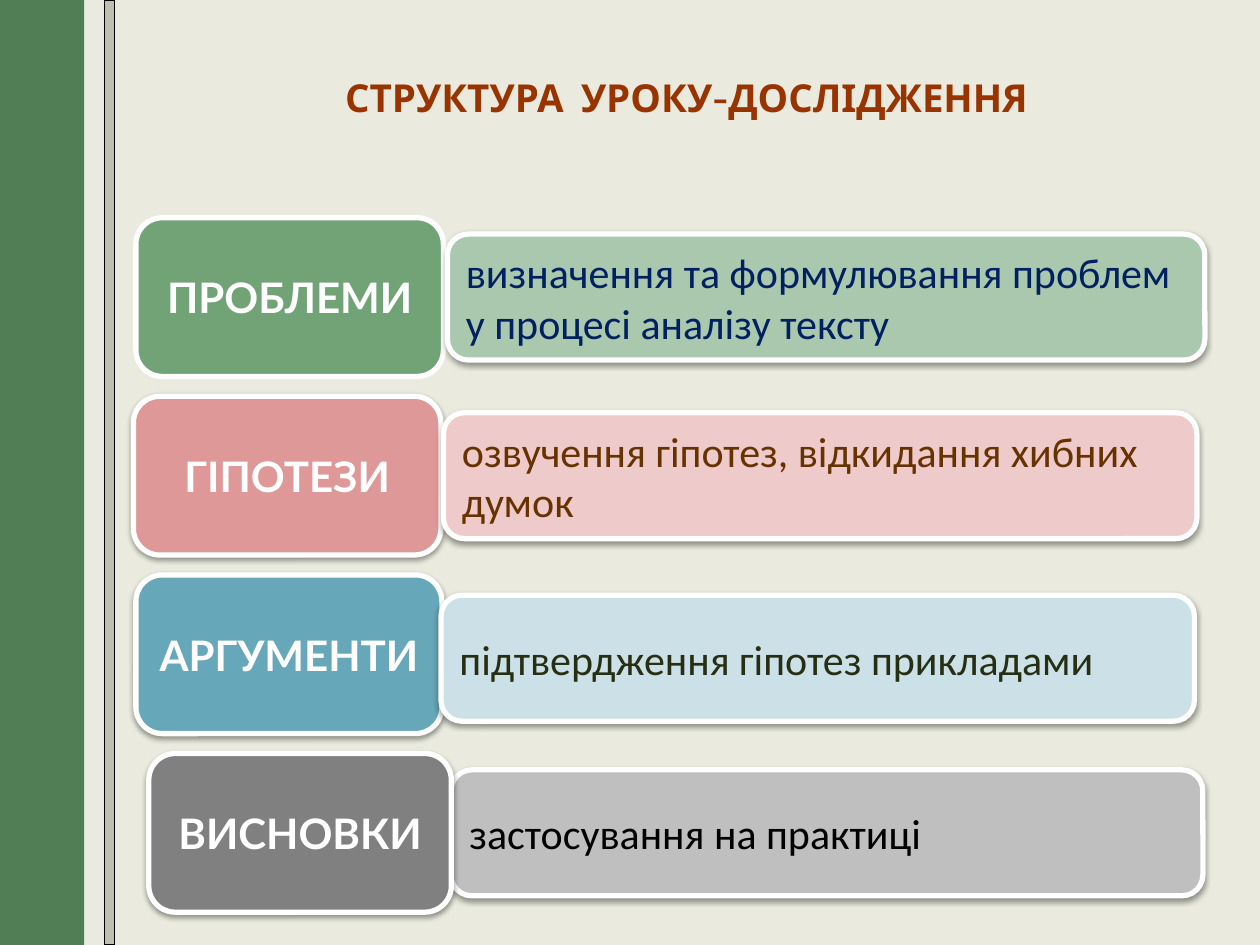
from lxml import etree
from pptx import Presentation
from pptx.dml.color import RGBColor
from pptx.enum.shapes import MSO_SHAPE
from pptx.enum.text import MSO_ANCHOR, MSO_AUTO_SIZE, PP_ALIGN
from pptx.oxml import parse_xml
from pptx.util import Cm, Pt

RECT = MSO_SHAPE.RECTANGLE
ROUND = MSO_SHAPE.ROUNDED_RECTANGLE
MIDDLE = MSO_ANCHOR.MIDDLE
FIXED = MSO_AUTO_SIZE.NONE
LEFT, CENTER = PP_ALIGN.LEFT, PP_ALIGN.CENTER

HEX = {
    "back": "EAEBDE", "band": "527E56", "strip": "C0BEAF", "title": "993300",
    "white": "FFFFFF", "black": "000000",
    "green": "72A376", "mint": "AAC8AD", "navy": "002060",
    "red": "DE9898", "pink": "EECACA", "brown": "663300",
    "teal": "66A7B9", "sky": "CBE1E7", "olive": "262F13",
    "gray": "808080", "silver": "BFBFBF",
}
HEAD = {"name": "Cabin", "size": Pt(22), "bold": True}
LABEL = {"name": "Lato", "size": Pt(24), "bold": True}
NOTE = {"name": "Calibri", "size": Pt(24), "bold": False}
FRAME = {"word_wrap": True, "vertical_anchor": MIDDLE, "auto_size": FIXED}

NS = "http://schemas.openxmlformats.org/drawingml/2006/main"
SHADE = (
    f'<a:outerShdw xmlns:a="{NS}" blurRad="39370" dist="20320" dir="5400000"'
    ' rotWithShape="0"><a:srgbClr val="000000"><a:alpha val="38000"/>'
    "</a:srgbClr></a:outerShdw>"
)

TOP, STEP, TALL = 4.39, 3.6, 3.2
ROWS = [
    {"label": "ПРОБЛЕМИ", "fill": "green", "x": 2.74, "w": 6.2, "shade": False,
     "note": "визначення та формулювання проблем у процесі аналізу тексту",
     "tint": "mint", "ink": "navy", "gap": 6.28, "drop": 0.33, "wide": 15.27},
    {"label": "ГІПОТЕЗИ", "fill": "red", "x": 2.69, "w": 6.2, "shade": True,
     "note": "озвучення гіпотез, відкидання хибних думок",
     "tint": "pink", "ink": "brown", "gap": 6.25, "drop": 0.33, "wide": 15.19},
    {"label": "АРГУМЕНТИ", "fill": "teal", "x": 2.74, "w": 6.17, "shade": True,
     "note": "підтвердження гіпотез прикладами",
     "tint": "sky", "ink": "olive", "gap": 6.15, "drop": 0.41, "wide": 15.19},
    {"label": "ВИСНОВКИ", "fill": "gray", "x": 3, "w": 6.1, "shade": True,
     "note": "застосування на практиці",
     "tint": "silver", "ink": "black", "gap": 6.09, "drop": 0.33, "wide": 15.16},
]


def color(key):
    return RGBColor.from_string(HEX[key])


def assign(item, values):
    for key, value in values.items():
        setattr(item, key, value)


def write(shape, text, font, ink, align):
    frame = shape.text_frame
    assign(frame, FRAME)
    par = frame.paragraphs[0]
    par.alignment = align
    run = par.add_run()
    run.text = text
    assign(run.font, font)
    run.font.color.rgb = color(ink)


def block(slide, kind, box, fill, edge=None, width=0, shade=False):
    shape = slide.shapes.add_shape(kind, *map(Cm, box))
    shape.shadow.inherit = False
    shape.fill.solid()
    shape.fill.fore_color.rgb = color(fill)
    if edge:
        shape.line.color.rgb = color(edge)
        shape.line.width = Pt(width)
    else:
        shape.line.fill.background()
    if shade:
        effect = shape._element.spPr.find(etree.QName(NS, "effectLst").text)
        effect.append(parse_xml(SHADE))
    return shape


def side(slide, x, y, h):
    block(slide, RECT, (x + 2.11, y, 0.2, h), "strip", "black", 0.75)
    block(slide, RECT, (x, y, 1.7, h), "band")


def title(slide, x, y, w, h):
    head = slide.shapes.title
    assign(head, {"left": Cm(x), "top": Cm(y), "width": Cm(w), "height": Cm(h)})
    write(head, "СТРУКТУРА  УРОКУ-ДОСЛІДЖЕННЯ", HEAD, "title", CENTER)


def stage(slide, row, x, y, w, h):
    def label():
        shape = block(slide, ROUND, (x, y, w, h), row["fill"], "white", 3, row["shade"])
        write(shape, row["label"], LABEL, "white", CENTER)

    def note():
        box = (x + row["gap"], y + row["drop"], row["wide"], 2.54)
        shape = block(slide, ROUND, box, row["tint"], "white", 3, True)
        write(shape, row["note"], NOTE, row["ink"], LEFT)

    order = (note, label) if row["gap"] < row["w"] and row is ROWS[-1] else (label, note)
    for draw in order:
        draw()


def main():
    deck = Presentation()
    deck.slide_width, deck.slide_height = Cm(25.4), Cm(19.05)
    slide = deck.slides.add_slide(deck.slide_layouts[5])
    slide.background.fill.solid()
    slide.background.fill.fore_color.rgb = color("back")
    side(slide, 0, 0, 19.05)
    title(slide, 5.84, 1.35, 16, 1.2)
    for i, row in enumerate(ROWS):
        stage(slide, row, row["x"], TOP + i * STEP, row["w"], TALL)
    deck.save("out.pptx")


if __name__ == "__main__":
    main()
